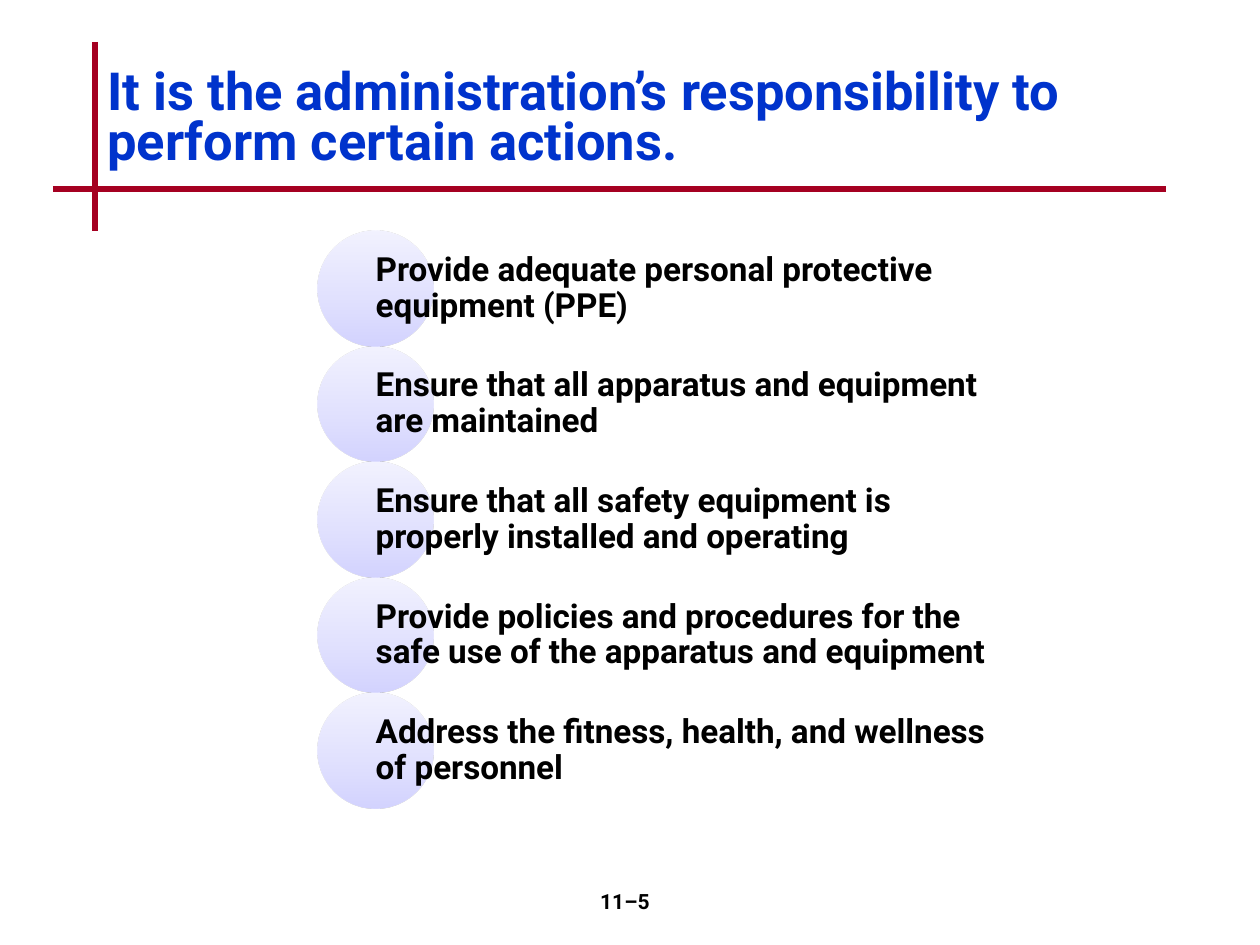
from lxml.etree import SubElement
from pptx import Presentation
from pptx.dml.color import RGBColor
from pptx.enum.shapes import MSO_CONNECTOR, MSO_SHAPE
from pptx.enum.text import MSO_ANCHOR as ANCHOR, PP_ALIGN as ALIGN
from pptx.oxml.ns import qn
from pptx.util import Pt

PX = 914400 / 126
RED = RGBColor(0xA5, 0x00, 0x21)
BLUE = RGBColor(0x00, 0x33, 0xCC)
BLACK = RGBColor(0x00, 0x00, 0x00)
CIRCLE_STOPS = [(0, RGBColor(0xA7, 0xA7, 0xFF)),
                (35, RGBColor(0xC1, 0xC1, 0xFF)),
                (100, RGBColor(0xE7, 0xE7, 0xFF))]
ACTIONS = [
    "Provide adequate personal protective equipment (PPE)",
    "Ensure that all apparatus and equipment are maintained",
    "Ensure that all safety equipment is properly installed and operating",
    "Provide policies and procedures for the safe use of the apparatus and equipment",
    "Address the fitness, health, and wellness of personnel",
]


def emu(*lengths):
    return [round(length * PX) for length in lengths]


def add_text(place, text, size, color, anchor=ANCHOR.MIDDLE, spacing=1.0):
    box = page.shapes.add_textbox(*emu(*place))
    frame = box.text_frame
    frame.word_wrap = True
    frame.vertical_anchor = anchor
    frame.text = text
    para = frame.paragraphs[0]
    para.line_spacing = spacing
    font = para.runs[0].font
    font.name, font.size, font.bold = "Roboto", Pt(size), True
    font.color.rgb = color
    return frame


deck = Presentation()
deck.slide_width, deck.slide_height = emu(1260, 945)
page = deck.slides.add_slide(deck.slide_layouts[6])

# Crossed rules beside and below the title
for ends in [(95, 42, 95, 231), (53, 189, 1166, 189)]:
    rule = page.shapes.add_connector(MSO_CONNECTOR.STRAIGHT, *emu(*ends))
    rule.line.color.rgb = RED
    rule.line.width = Pt(3)
    SubElement(rule._element.spPr, qn("a:effectLst"))

# Stacked circles, each with its action starting at the circle's centre
left, top, diameter = 318, 231, 115.5
for row, action in enumerate(ACTIONS):
    y = top + row * diameter
    circle = page.shapes.add_shape(MSO_SHAPE.OVAL, *emu(left, y, diameter, diameter))
    circle.shadow.inherit = False
    circle.line.fill.background()
    circle.fill.gradient()
    circle.fill.gradient_angle = 90
    stops = circle._element.spPr.find(qn("a:gradFill")).find(qn("a:gsLst"))
    for stop in list(stops):
        stops.remove(stop)
    for position, color in CIRCLE_STOPS:
        stop = SubElement(stops, qn("a:gs"), pos=str(position * 1000))
        shade = SubElement(stop, qn("a:srgbClr"), val=str(color))
        SubElement(shade, qn("a:alpha"), val="50000")

    frame = add_text((left + diameter / 2, y, 615, diameter), action, 19, BLACK, spacing=0.9)
    frame.margin_left = frame.margin_right = 0
    frame.margin_top = frame.margin_bottom = emu(4)[0]

add_text((95, 42, 1071, 157),
         "It is the administration’s responsibility to perform certain actions.",
         30, BLUE, spacing=0.8)
number = add_text((494, 882, 262, 63), "11–5", 12, BLACK, ANCHOR.TOP)
number.paragraphs[0].alignment = ALIGN.CENTER

deck.save("out.pptx")
